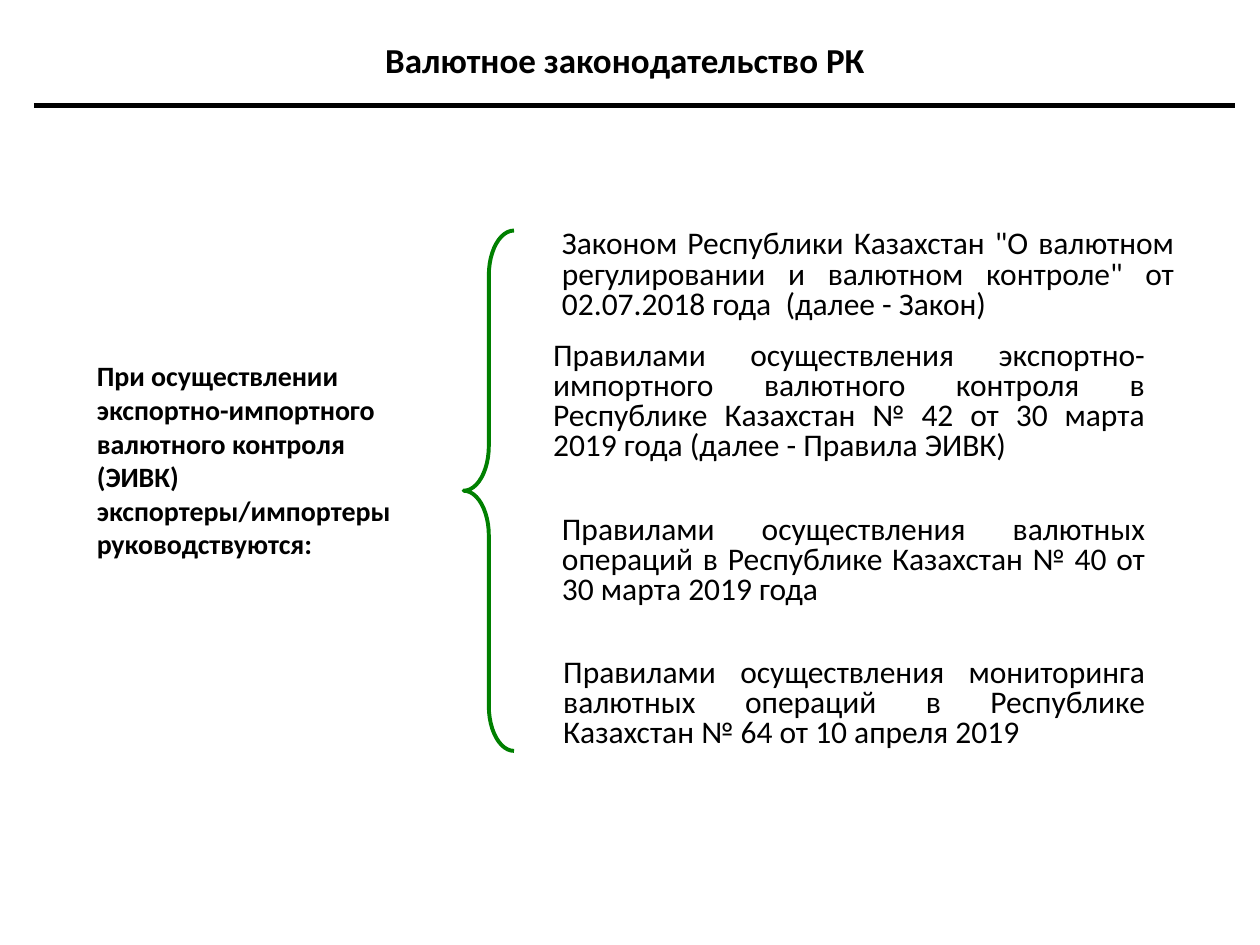
"""Build a slide on the rules that govern export-import currency control."""
from dataclasses import dataclass

from lxml import etree
from pptx import Presentation
from pptx.dml.color import RGBColor
from pptx.enum.shapes import MSO_CONNECTOR, MSO_SHAPE
from pptx.enum.text import MSO_ANCHOR, PP_ALIGN
from pptx.oxml.ns import qn
from pptx.util import Inches, Pt

CENTER, JUSTIFY, LEFT = PP_ALIGN.CENTER, PP_ALIGN.JUSTIFY, PP_ALIGN.LEFT
MIDDLE, TOP = MSO_ANCHOR.MIDDLE, MSO_ANCHOR.TOP
STRAIGHT = MSO_CONNECTOR.STRAIGHT
LEFT_BRACE, RECTANGLE = MSO_SHAPE.LEFT_BRACE, MSO_SHAPE.RECTANGLE


@dataclass(frozen=True)
class Theme:
    font: str = "Calibri"
    ink: RGBColor = RGBColor(0, 0, 0)
    paper: RGBColor = RGBColor(0xFF, 0xFF, 0xFF)
    brace: RGBColor = RGBColor(0, 0x80, 0)
    title_size: int = 20
    lead_size: int = 16
    law_size: int = 18
    rule_width: float = 3
    brace_width: float = 2.25


THEME = Theme()
TITLE = "Валютное законодательство РК"
LEAD = (
    "При осуществлении экспортно-импортного валютного контроля (ЭИВК) "
    "экспортеры/импортеры руководствуются:"
)
LAWS = [
    ('Законом Республики Казахстан "О валютном регулировании и валютном '
     'контроле" от 02.07.2018 года  (далее - Закон)', (4.38, 1.83, 5.02, 0.72)),
    ("Правилами осуществления экспортно-импортного валютного контроля в "
     "Республике Казахстан № 42 от 30 марта 2019 года (далее - Правила ЭИВК)",
     (4.31, 2.76, 4.86, 0.87)),
    ("Правилами осуществления валютных операций в Республике Казахстан № 40 "
     "от 30 марта 2019 года", (4.38, 3.95, 4.79, 1.01)),
    ("Правилами осуществления мониторинга валютных операций в Республике "
     "Казахстан № 64 от 10 апреля 2019", (4.39, 5.05, 4.78, 1.08)),
]


def add_text(slide, text, box, *, size, bold=False, align=LEFT, anchor=TOP,
             spacing=1.0, insets=(0.1, 0.05), fill=None):
    place = [Inches(length) for length in box]
    if fill is None:
        holder = slide.shapes.add_textbox(*place)
    else:
        holder = slide.shapes.add_shape(RECTANGLE, *place)
        holder.shadow.inherit = False
        holder.fill.solid()
        holder.fill.fore_color.rgb = fill
        holder.line.fill.background()
    frame = holder.text_frame
    frame.word_wrap = True
    frame.vertical_anchor = anchor
    frame.margin_left = frame.margin_right = Inches(insets[0])
    frame.margin_top = frame.margin_bottom = Inches(insets[1])
    paragraph = frame.paragraphs[0]
    paragraph.alignment = align
    paragraph.line_spacing = spacing
    run = paragraph.add_run()
    run.text = text
    run.font.name = THEME.font
    run.font.size = Pt(size)
    run.font.bold = bold
    run.font.color.rgb = THEME.ink


def add_title_rule(slide):
    rule = slide.shapes.add_connector(
        STRAIGHT, Inches(0.27), Inches(0.84), Inches(9.8), Inches(0.84))
    rule.line.color.rgb = THEME.ink
    rule.line.width = Pt(THEME.rule_width)
    etree.SubElement(rule._element.spPr, qn("a:effectLst"))


def add_brace(slide):
    brace = slide.shapes.add_shape(
        LEFT_BRACE, Inches(3.68), Inches(1.83), Inches(0.4), Inches(4.13))
    brace.adjustments[0] = 0.89
    brace.adjustments[1] = 0.5
    brace.shadow.inherit = False
    brace.fill.background()
    brace.line.color.rgb = THEME.brace
    brace.line.width = Pt(THEME.brace_width)


def main():
    deck = Presentation()
    deck.slide_width, deck.slide_height = Inches(10), Inches(7.5)
    slide = deck.slides.add_slide(deck.slide_layouts[6])
    add_title_rule(slide)
    add_text(slide, TITLE, (1.14, 0.21, 7.64, 0.53), size=THEME.title_size,
             bold=True, align=CENTER, anchor=MIDDLE, fill=THEME.paper)
    add_text(slide, LEAD, (0.67, 2.8, 2.59, 1.72), size=THEME.lead_size, bold=True)
    for law, box in LAWS:
        add_text(slide, law, box, size=THEME.law_size, align=JUSTIFY,
                 anchor=MIDDLE, spacing=0.8, insets=(0.08, 0.04))
    add_brace(slide)
    deck.save("out.pptx")


if __name__ == "__main__":
    main()
